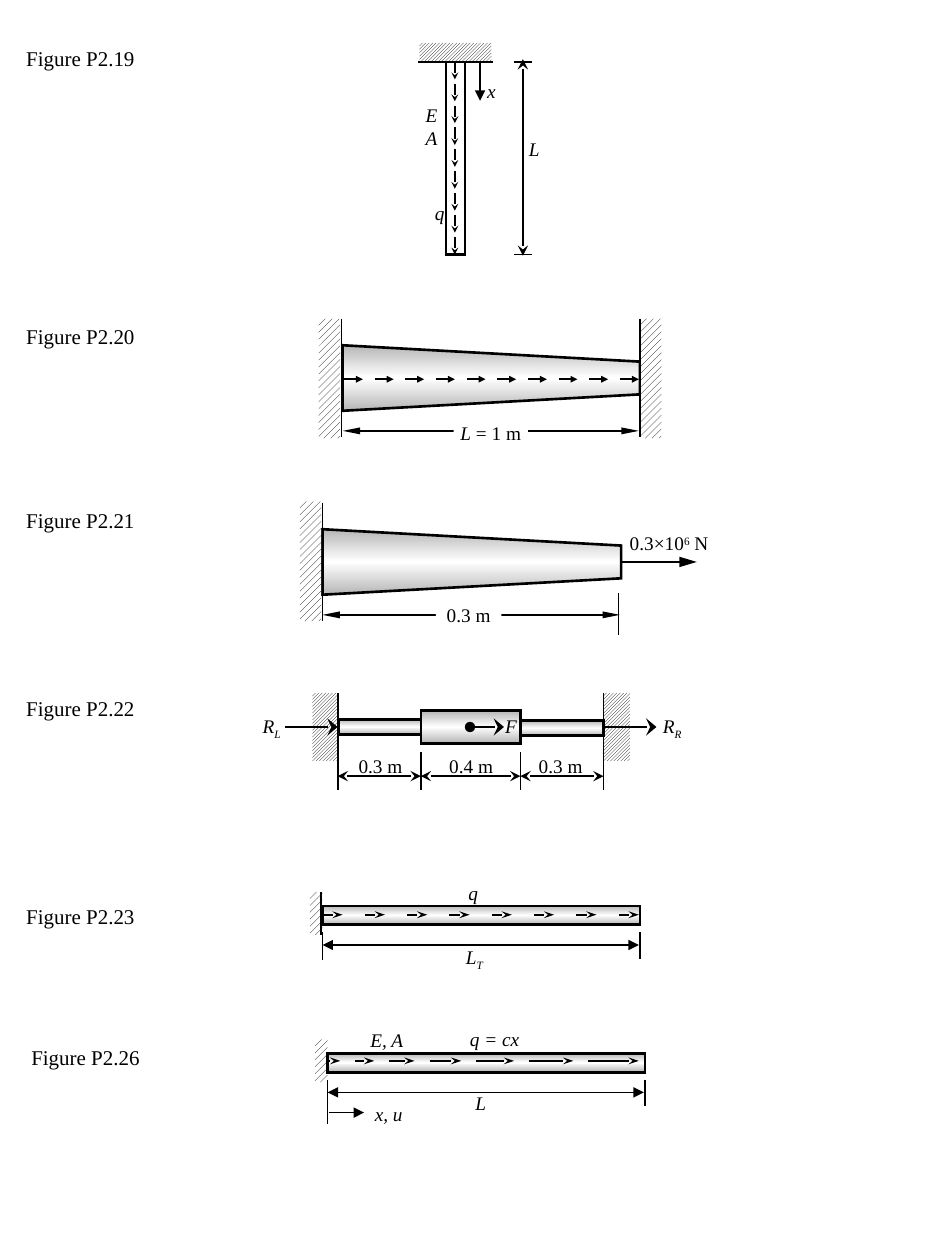
from copy import deepcopy
from lxml import etree
from pptx import Presentation
from pptx import util as u
from pptx.dml import color
from pptx.enum import dml, shapes, text
from pptx.oxml import ns

BLACK, WHITE, GREY = "000000", "FFFFFF", "B6B6B6"
LIGHT = dml.MSO_PATTERN.LIGHT_UPWARD_DIAGONAL
WIDE = dml.MSO_PATTERN.WIDE_UPWARD_DIAGONAL
DARK = dml.MSO_PATTERN.DARK_UPWARD_DIAGONAL
TRIANGLE = ("triangle", "med", "med")
SMALL = ("triangle", "sm", "sm")
SLIM = ("triangle", "sm", "lg")
LONG = ("triangle", "med", "lg")
STEALTH = ("stealth", "med", "med")
BARB = ("stealth", "sm", "sm")
DART = ("stealth", "sm", "med")
FORCE = ("stealth", "lg", "med")
DOT = ("oval", "med", "med")


def rgb(value):
    return color.RGBColor.from_string(value)


def roman(words):
    return words, False, 0


def italic(words):
    return words, True, 0


def subscript(words):
    return words, True, -25000


def superscript(words):
    return words, False, 30000


def spread(first, last, count):
    return [first + (last - first) * i / (count - 1) for i in range(count)]


class Sketch:
    font = "Times New Roman"

    def __init__(self, page):
        self.page = page
        self.items = page.shapes

    def figure(self, name, left, top):
        self.items = self.page.shapes
        self.label([[roman(name)]], left, top, 1.07, 0.3, size=12, loose=True)
        self.items = self.page.shapes.add_group_shape().shapes

    def add_words(self, shape, paras, size=11, loose=False):
        frame = shape.text_frame
        frame.word_wrap = not loose
        frame.vertical_anchor = text.MSO_ANCHOR.TOP
        if loose:
            frame.auto_size = text.MSO_AUTO_SIZE.SHAPE_TO_FIT_TEXT
        else:
            frame.margin_left = frame.margin_right = 0
            frame.margin_top = frame.margin_bottom = 0
        for i, spans in enumerate(paras):
            para = frame.paragraphs[0] if i == 0 else frame.add_paragraph()
            para.alignment = text.PP_ALIGN.LEFT if loose else text.PP_ALIGN.CENTER
            for words, slanted, shift in spans:
                span = para.add_run()
                span.text = words
                span.font.name = self.font
                span.font.size = u.Pt(size)
                span.font.italic = slanted
                span.font.color.rgb = rgb(BLACK)
                if shift:
                    span._r.get_or_add_rPr().set("baseline", str(shift))

    def label(self, paras, left, top, width, height, **style):
        box = self.items.add_textbox(*map(u.Inches, (left, top, width, height)))
        self.add_words(box, paras, **style)

    def box(self, left, top, width, height):
        box = self.items.add_shape(shapes.MSO_SHAPE.RECTANGLE,
                                   *map(u.Inches, (left, top, width, height)))
        box.shadow.inherit = False
        box.line.fill.background()
        return box

    def plate(self, spans, left, top, width, height):
        box = self.box(left, top, width, height)
        box.fill.solid()
        box.fill.fore_color.rgb = rgb(WHITE)
        self.add_words(box, [spans])

    def wall(self, pattern, left, top, width, height):
        box = self.box(left, top, width, height)
        box.fill.patterned()
        box.fill.pattern = pattern
        box.fill.fore_color.rgb = rgb(BLACK)
        box.fill.back_color.rgb = rgb(WHITE)

    def outline(self, shape):
        shape.line.color.rgb = rgb(BLACK)
        shape.line.width = u.Pt(1.5)
        join = etree.SubElement(shape.line._get_or_add_ln(), ns.qn("a:miter"))
        join.set("lim", "800000")

    def shade(self, shape):
        shape.fill.gradient()
        stops = shape._element.spPr.find(".//" + ns.qn("a:gsLst"))
        stops.append(deepcopy(stops[0]))
        for stop, place, tone in zip(shape.fill.gradient_stops, (0, 0.5, 1), (GREY, WHITE, GREY)):
            stop.position = place
            stop.color.rgb = rgb(tone)
        shape.fill.gradient_angle = 90

    def bar(self, left, top, width, height, shaded=True):
        box = self.box(left, top, width, height)
        if shaded:
            self.shade(box)
        else:
            box.fill.background()
        self.outline(box)

    def taper(self, left, right, middle):
        corners = [(left, middle + 0.26), (right, middle + 0.13),
                   (right, middle - 0.13), (left, middle - 0.26)]
        points = [(u.Inches(x), u.Inches(y)) for x, y in corners]
        builder = self.items.build_freeform(*points[0])
        builder.add_line_segments(points[1:], close=True)
        body = builder.convert_to_shape()
        body.shadow.inherit = False
        self.shade(body)
        self.outline(body)

    def line(self, x1, y1, x2, y2, head=None, tail=None, weight=1):
        link = self.items.add_connector(shapes.MSO_CONNECTOR.STRAIGHT,
                                        *map(u.Inches, (x1, y1, x2, y2)))
        link.line.color.rgb = rgb(BLACK)
        link.line.width = u.Pt(weight)
        for tag, tip in (("a:headEnd", head), ("a:tailEnd", tail)):
            if tip:
                end = etree.SubElement(link.line._get_or_add_ln(), ns.qn(tag))
                for key, value in zip(("type", "w", "len"), tip):
                    end.set(key, value)
        etree.SubElement(link._element.spPr, ns.qn("a:effectLst"))

    def span(self, x1, x2, y, tip):
        self.line(x1, y, x2, y, tip, tip)

    def arrow(self, x1, x2, y, tip, **style):
        self.line(x1, y, x2, y, tail=tip, **style)

    def post(self, x, top, bottom, **style):
        self.line(x, top, x, bottom, **style)


def hanging_bar(art):
    art.figure("Figure P2.19", 0.11, 0.31)
    art.bar(3.54, 0.49, 0.15, 1.53, shaded=False)
    art.wall(LIGHT, 3.33, 0.34, 0.57, 0.15)
    art.line(3.32, 0.49, 3.91, 0.49)
    art.post(3.81, 0.49, 0.8, tail=TRIANGLE)
    art.post(4.15, 0.47, 2.03, head=STEALTH, tail=STEALTH)
    for y in (0.49, 2.02):
        art.line(4.08, y, 4.22, y)
    for y in spread(0.49, 1.88, 9):
        art.post(3.61, y, y + 0.14, tail=BARB)
    art.label([[italic("x")]], 3.84, 0.63, 0.12, 0.22)
    art.label([[italic("L")]], 4.17, 1.09, 0.14, 0.22)
    art.label([[italic("E")], [italic("A")]], 3.35, 0.82, 0.15, 0.39)
    art.label([[italic("q")]], 3.42, 1.6, 0.14, 0.22)


def tapered_bars(art):
    art.figure("Figure P2.20", 0.11, 2.52)
    art.taper(2.72, 5.08, 3)
    for wall, edge in ((2.53, 2.71), (5.08, 5.08)):
        art.wall(WIDE, wall, 2.53, 0.17, 0.95)
        art.post(edge, 2.53, 3.47)
    for x in spread(2.73, 4.92, 10):
        art.arrow(x, x + 0.15, 3.01, SMALL)
    art.span(2.72, 5.07, 3.42, SLIM)
    art.plate([italic("L"), roman(" = 1 m")], 3.6, 3.34, 0.59, 0.16)

    art.figure("Figure P2.21", 0.11, 3.98)
    art.taper(2.56, 4.93, 4.46)
    art.wall(WIDE, 2.38, 3.98, 0.17, 0.95)
    art.post(2.56, 3.99, 4.93)
    art.span(2.56, 4.92, 4.88, SLIM)
    art.plate([roman("0.3 m")], 3.46, 4.79, 0.52, 0.16)
    art.post(4.91, 4.71, 5.04, weight=0.75)
    art.arrow(4.92, 5.53, 4.46, LONG, weight=1.5)
    art.plate([roman("0.3×10"), superscript("6"), roman(" N")], 4.97, 4.22, 0.68, 0.18)


def stepped_bar(art):
    art.figure("Figure P2.22", 0.11, 5.47)
    for x in (2.48, 4.79):
        art.wall(DARK, x, 5.5, 0.21, 0.54)
    art.bar(2.69, 5.71, 0.66, 0.12)
    art.bar(3.34, 5.64, 0.79, 0.26)
    art.bar(4.13, 5.72, 0.66, 0.12)
    edges = (2.68, 3.34, 4.13, 4.79)
    for x, top in zip(edges, (5.5, 5.97, 5.97, 5.5)):
        art.post(x, top, 6.27)
    for start, end, size, left in zip(edges, edges[1:], ("0.3 m", "0.4 m", "0.3 m"),
                                      (2.77, 3.49, 4.2)):
        art.span(start, end, 6.16, STEALTH)
        art.label([[roman(size)]], left, 5.99, 0.5, 0.2)
    for start, end, head in ((4.78, 5.21, None), (2.26, 2.68, None), (3.73, 4, DOT)):
        art.arrow(start, end, 5.77, FORCE, head=head, weight=1.5)
    art.label([[italic("F")]], 3.93, 5.67, 0.25, 0.2)
    for side, left in (("R", 5.21), ("L", 2.03)):
        art.label([[italic("R"), subscript(side)]], left, 5.67, 0.25, 0.2)


def loaded_bar(art, left, top, drop):
    art.wall(WIDE, left - 0.1, top - 0.11, 0.1, 0.34)
    art.bar(left, top, 2.52, 0.15)
    art.post(left, top + 0.21, top + drop)
    art.post(left + 2.52, top + 0.21, top + 0.42)
    art.span(left, left + 2.51, top + 0.31, TRIANGLE)


def uniform_and_linear_loads(art):
    art.figure("Figure P2.23", 0.11, 7.12)
    loaded_bar(art, 2.56, 7.19, 0.43)
    art.post(2.55, 7.08, 7.42)
    for x in spread(2.56, 4.91, 8):
        art.arrow(x, x + 0.16, 7.26, DART)
    art.label([[italic("L"), subscript("T")]], 3.66, 7.5, 0.21, 0.21)
    art.label([[italic("q")]], 3.65, 6.99, 0.21, 0.21)

    art.figure("Figure P2.26", 0.15, 8.24)
    loaded_bar(art, 2.6, 8.36, 0.56)
    x = 2.6
    for i in range(7):
        length = 0.1 + 0.05 * i
        art.arrow(x, x + length, 8.42, DART)
        x += length + 0.12
    art.arrow(2.61, 2.89, 8.83, TRIANGLE)
    art.label([[italic("L")]], 3.71, 8.66, 0.21, 0.21)
    art.label([[italic("q = cx")]], 3.7, 8.15, 0.45, 0.21)
    art.label([[italic("E, A")]], 2.84, 8.11, 0.49, 0.29, loose=True)
    art.label([[italic("x, u")]], 2.86, 8.75, 0.45, 0.21)


def main():
    deck = Presentation()
    deck.slide_width, deck.slide_height = u.Inches(7.5), u.Inches(10)
    art = Sketch(deck.slides.add_slide(deck.slide_layouts[6]))
    for draw in (hanging_bar, tapered_bars, stepped_bar, uniform_and_linear_loads):
        draw(art)
    deck.save("out.pptx")


if __name__ == "__main__":
    main()
